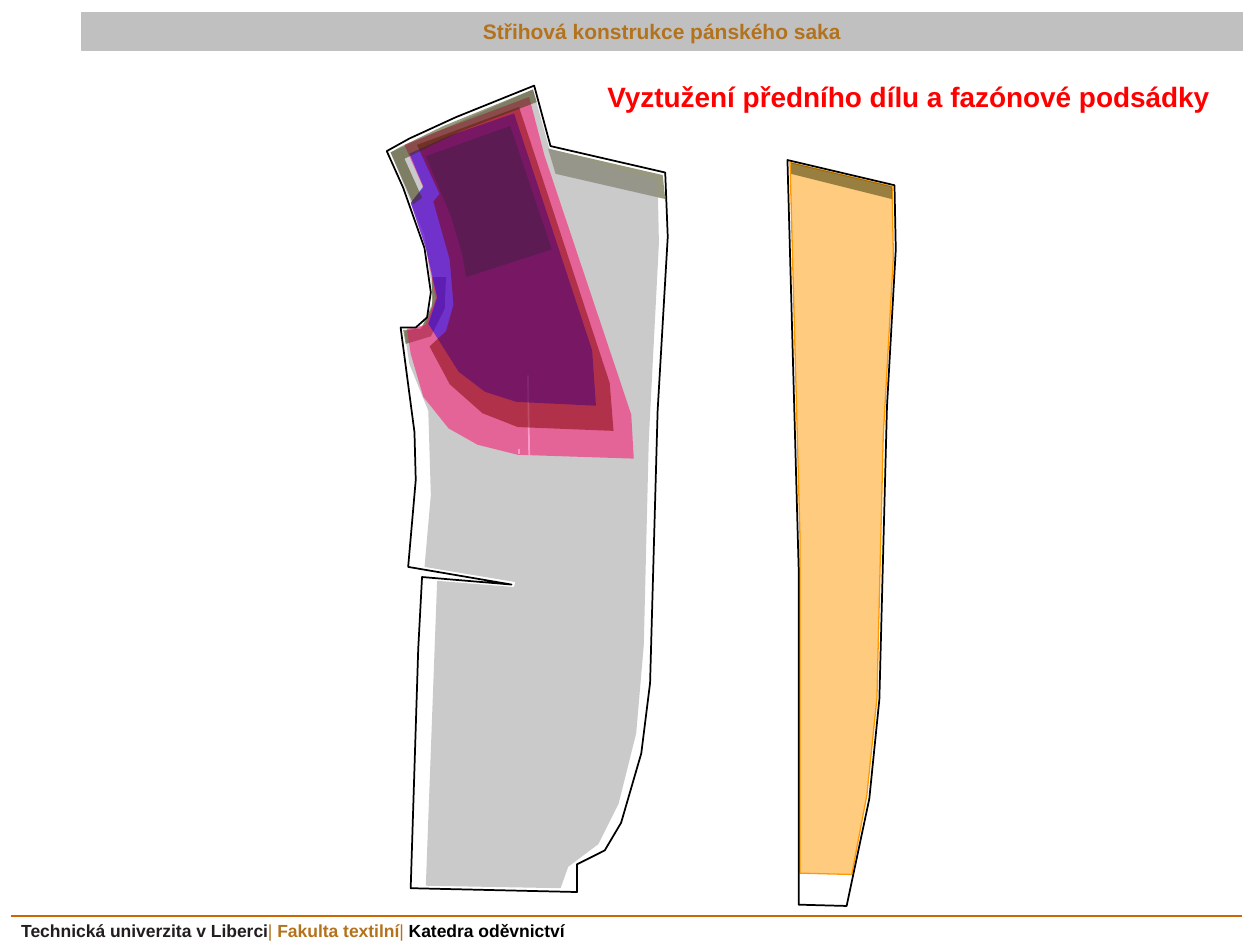
"""Build the slide on reinforcing the front panel and lapel facing of a men's jacket."""
from lxml.etree import SubElement
from pptx import Presentation
from pptx.dml.color import RGBColor
from pptx.enum.shapes import MSO_CONNECTOR, MSO_SHAPE
from pptx.enum.text import MSO_ANCHOR, PP_ALIGN
from pptx.oxml.ns import qn
from pptx.util import Inches, Pt

BLACK = RGBColor(0x00, 0x00, 0x00)
DARK = RGBColor(0x22, 0x1E, 0x1F)
BROWN = RGBColor(0xB3, 0x72, 0x1C)
RULE = RGBColor(0xCC, 0x66, 0x00)
SILVER = RGBColor(0xC0, 0xC0, 0xC0)
RED = RGBColor(0xFF, 0x00, 0x00)
ORANGE = RGBColor(0xFF, 0x99, 0x00)
OLIVE = RGBColor(0x33, 0x33, 0x00)
GREY = RGBColor(0x96, 0x96, 0x96)
PINK = RGBColor(0xFF, 0x00, 0x66)
PALE_PINK = RGBColor(0xFF, 0x99, 0xCC)
GREEN = RGBColor(0x00, 0x80, 0x00)
BLUE = RGBColor(0x00, 0x00, 0xFF)
MAROON = RGBColor(0x80, 0x00, 0x00)

HEADER = [("Střihová konstrukce pánského saka", BROWN, True)]
HEADING = [("Vyztužení předního dílu a fazónové podsádky", RED, True)]
FOOTER = [
    ("Technická univerzita v Liberci", DARK, True),
    ("| ", BROWN, False),
    ("Fakulta textilní", BROWN, True),
    ("| ", BROWN, False),
    ("Katedra oděvnictví", BLACK, True),
]

FACING = [
    (6.27, 1.29), (6.35, 4.29), (6.35, 6.93), (6.76, 6.94), (6.88, 6.31),
    (6.96, 5.54), (7.01, 3.46), (7.09, 2.04), (7.08, 1.48),
]
FACING_OUTLINE = [
    (6.25, 1.27), (7.1, 1.47), (7.11, 1.98), (7.04, 3.23), (6.98, 5.55),
    (6.9, 6.34), (6.72, 7.19), (6.34, 7.18), (6.34, 4.54),
]
FACING_TAPE = [(6.28, 1.29), (6.28, 1.38), (7.08, 1.58), (7.08, 1.48)]
LAPEL_TAPE = [(4.35, 1.18), (4.41, 1.38), (5.28, 1.58), (5.26, 1.39)]
FRONT = [
    (3.38, 7.03), (4.45, 7.05), (4.51, 6.88), (4.75, 6.7), (4.91, 6.38), (5.05, 5.82),
    (5.11, 5.12), (5.15, 3.49), (5.23, 1.93), (5.22, 1.43), (4.36, 1.18), (4.23, 0.71),
    (3.1, 1.21), (3.37, 1.87), (3.44, 2.38), (3.36, 2.59), (3.21, 2.63), (3.25, 2.89),
    (3.4, 3.26), (3.42, 3.93), (3.37, 4.5), (4.09, 4.62), (4.08, 4.66), (3.47, 4.61),
]
ARMHOLE_TAPE = [
    (3.43, 2.2), (3.54, 2.2), (3.53, 2.45), (3.42, 2.67), (3.22, 2.73), (3.2, 2.62),
    (3.34, 2.61), (3.43, 2.43),
]
CHEST_LARGE = [
    (3.21, 1.15), (3.48, 1.04), (4.2, 0.77), (4.32, 1.23), (5.01, 3.29), (5.03, 3.64),
    (4.11, 3.61), (3.79, 3.53), (3.56, 3.4), (3.36, 3.15), (3.26, 2.81), (3.23, 2.61),
    (3.38, 2.58), (3.46, 2.37), (3.38, 1.97), (3.26, 1.61), (3.36, 1.49),
]
CHEST_MARKS = [[(4.19, 2.98), (4.2, 3.61)], [(4.12, 3.56), (4.12, 3.6)]]
SHOULDER_PATCH = [
    (3.67, 2.02), (3.7, 2.2), (4.38, 1.98), (4.05, 1), (3.38, 1.24), (3.58, 1.72),
]
CHEST_SMALL = [
    (3.25, 1.22), (3.56, 1.08), (4.08, 0.9), (4.7, 2.78), (4.73, 3.22), (4.1, 3.19),
    (3.85, 3.11), (3.64, 2.95), (3.4, 2.57), (3.47, 2.36), (3.38, 1.97), (3.26, 1.61),
    (3.36, 1.48),
]
CHEST_MIDDLE = [
    (3.41, 2.75), (3.54, 2.63), (3.6, 2.42), (3.57, 2.06), (3.44, 1.6), (3.49, 1.54),
    (3.31, 1.15), (4.12, 0.85), (4.84, 3.04), (4.87, 3.42), (4.11, 3.39), (3.83, 3.28),
    (3.57, 3.05),
]
FRONT_OUTLINE = [
    (3.62, 0.93), (4.24, 0.68), (4.37, 1.16), (5.28, 1.37), (5.3, 1.88), (5.22, 3.26),
    (5.16, 5.42), (5.09, 5.98), (4.93, 6.53), (4.8, 6.75), (4.58, 6.86), (4.58, 7.08),
    (3.26, 7.05), (3.32, 5.15), (3.35, 4.58), (4.06, 4.64), (3.24, 4.5), (3.3, 3.81),
    (3.29, 3.43), (3.18, 2.6), (3.3, 2.6), (3.39, 2.52), (3.42, 2.32), (3.37, 1.97),
    (3.2, 1.49), (3.07, 1.2), (3.25, 1.1),
]
NECK_TAPE = [(3.1, 1.21), (3.17, 1.17), (3.35, 1.57), (3.28, 1.62)]
SHOULDER_TAPE = [
    (4.23, 0.71), (3.52, 1), (3.17, 1.17), (3.21, 1.26), (3.66, 1.04), (4.26, 0.81),
]


def add_piece(shapes, points, fill=None, line=None, width=1):
    corners = [(Inches(x), Inches(y)) for x, y in points]
    if len(corners) == 2:
        piece = shapes.add_connector(MSO_CONNECTOR.STRAIGHT, *corners[0], *corners[1])
        SubElement(piece._element.spPr, qn("a:effectLst"))
    else:
        builder = shapes.build_freeform(*corners[0])
        builder.add_line_segments(corners[1:], close=True)
        piece = builder.convert_to_shape()
        piece.shadow.inherit = False
        piece.fill.background()
    if fill is not None:
        piece.fill.solid()
        piece.fill.fore_color.rgb = fill
        color = piece._element.spPr.find(qn("a:solidFill"))[0]
        SubElement(color, qn("a:alpha"), val="50000")
    if line is None:
        piece.line.fill.background()
    else:
        piece.line.color.rgb = line
        piece.line.width = Pt(width)


def write(holder, runs, size, align=PP_ALIGN.LEFT, anchor=MSO_ANCHOR.TOP):
    frame = holder.text_frame
    frame.word_wrap = True
    frame.vertical_anchor = anchor
    paragraph = frame.paragraphs[0]
    paragraph.alignment = align
    for text, color, bold in runs:
        run = paragraph.add_run()
        run.text = text
        run.font.name, run.font.size, run.font.bold = "Arial", Pt(size), bold
        run.font.color.rgb = color


def main():
    deck = Presentation()
    deck.slide_width, deck.slide_height = Inches(10), Inches(7.5)
    slide = deck.slides.add_slide(deck.slide_layouts[5])
    shapes = slide.shapes

    footer = shapes.add_textbox(Inches(0.07), Inches(7.25), Inches(5.85), Inches(0.27))
    write(footer, FOOTER, 10)
    band = shapes.add_shape(MSO_SHAPE.RECTANGLE, Inches(0.65), Inches(0.1), Inches(9.21), Inches(0.3))
    band.shadow.inherit = False
    band.fill.solid()
    band.fill.fore_color.rgb = band.line.color.rgb = SILVER
    band.line.width = Pt(0.75)
    write(band, HEADER, 12, PP_ALIGN.CENTER, MSO_ANCHOR.MIDDLE)
    add_piece(shapes, [(0.09, 7.27), (9.86, 7.27)], line=RULE, width=1.5)

    add_piece(shapes, FACING, ORANGE, ORANGE, 0)
    add_piece(shapes, FACING_OUTLINE, line=BLACK)
    for points, color in [(FACING_TAPE, OLIVE), (LAPEL_TAPE, OLIVE), (FRONT, GREY), (ARMHOLE_TAPE, OLIVE)]:
        add_piece(shapes, points, color)
    chest = shapes.add_group_shape().shapes
    add_piece(chest, CHEST_LARGE, PINK)
    for mark in CHEST_MARKS:
        add_piece(chest, mark, line=PALE_PINK)
    for points, color in [(SHOULDER_PATCH, GREEN), (CHEST_SMALL, BLUE), (CHEST_MIDDLE, MAROON)]:
        add_piece(shapes, points, color)
    add_piece(shapes, FRONT_OUTLINE, line=BLACK)
    for tape in (NECK_TAPE, SHOULDER_TAPE):
        add_piece(shapes, tape, OLIVE)

    heading = shapes.title
    heading.left, heading.top, heading.width, heading.height = map(Inches, (4.72, 0.58, 5.2, 0.37))
    write(heading, HEADING, 16)
    deck.save("out.pptx")


if __name__ == "__main__":
    main()
